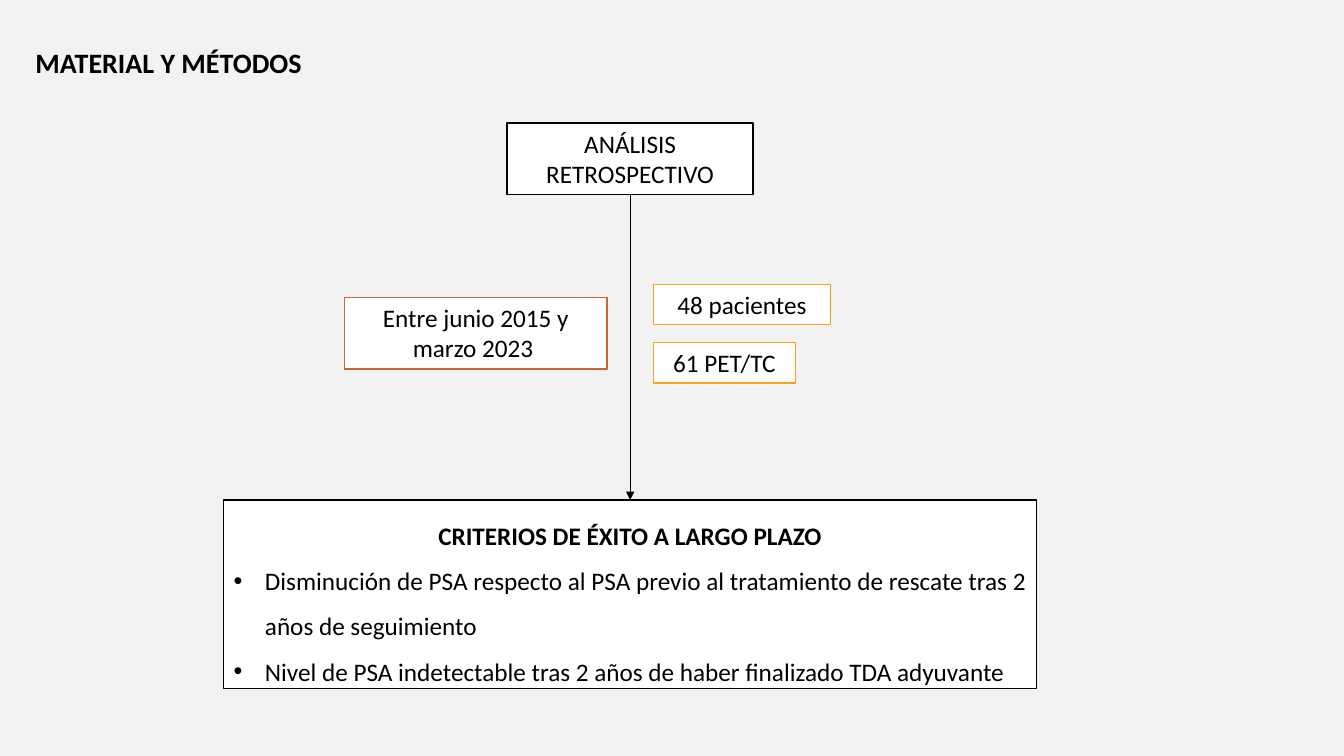
from pptx import Presentation
from pptx.dml.color import RGBColor
from pptx.enum.shapes import MSO_CONNECTOR, MSO_SHAPE
from pptx.enum.text import MSO_ANCHOR, MSO_AUTO_SIZE, PP_ALIGN as AL
from pptx.oxml.ns import qn
from pptx.util import Inches, Pt
from lxml.etree import SubElement


def rgb(value):
    return RGBColor.from_string(value)


class Deck:
    FONT, INK, PAPER, GROUND = "Calibri", "000000", "FFFFFF", "F2F2F2"
    BODY, HEADING = 18, 20

    def __init__(self):
        self.prs = Presentation()
        self.prs.slide_width, self.prs.slide_height = Inches(13.33), Inches(7.5)
        self.s = self.prs.slides.add_slide(self.prs.slide_layouts[5])
        self.s.background.fill.solid()
        self.s.background.fill.fore_color.rgb = rgb(self.GROUND)

    def style(self, p, size, align, bold=False, spacing=None):
        p.alignment = align
        p.line_spacing = spacing
        p.font.name, p.font.size, p.font.bold = self.FONT, Pt(size), bold
        p.font.color.rgb = rgb(self.INK)

    def frame(self, tf):
        tf.word_wrap = True
        tf.auto_size = MSO_AUTO_SIZE.SHAPE_TO_FIT_TEXT
        tf.vertical_anchor = MSO_ANCHOR.TOP

    def title(self, text, x, y, w, h):
        sp = self.s.shapes.title
        sp.left, sp.top, sp.width, sp.height = map(Inches, (x, y, w, h))
        sp.text_frame.text = text
        self.frame(sp.text_frame)
        self.style(sp.text_frame.paragraphs[0], self.HEADING, AL.LEFT, True, 1.5)

    def box(self, text, x, y, w, h, line=INK, bold=False, spacing=None):
        sp = self.s.shapes.add_shape(MSO_SHAPE.RECTANGLE, *map(Inches, (x, y, w, h)))
        sp.shadow.inherit = False
        sp.fill.solid()
        sp.fill.fore_color.rgb = rgb(self.PAPER)
        sp.line.color.rgb, sp.line.width = rgb(line), Pt(1)
        sp.text_frame.text = text
        self.frame(sp.text_frame)
        self.style(sp.text_frame.paragraphs[0], self.BODY, AL.CENTER, bold, spacing)
        return sp

    def bullet(self, sp, text):
        p = sp.text_frame.add_paragraph()
        p.text = text
        self.style(p, self.BODY, AL.JUSTIFY, spacing=1.5)
        pPr = p._p.get_or_add_pPr()
        indent = Inches(0.31)
        pPr.set("marL", str(indent))
        pPr.set("indent", str(-indent))
        # Bullet elements go before the default run properties
        font = pPr.makeelement(qn("a:buFont"), {"typeface": "Arial"})
        char = pPr.makeelement(qn("a:buChar"), {"char": "•"})
        run_style = pPr.find(qn("a:defRPr"))
        run_style.addprevious(font)
        run_style.addprevious(char)

    def arrow(self, upper, lower):
        c = self.s.shapes.add_connector(MSO_CONNECTOR.STRAIGHT, 0, 0, 0, 0)
        c.begin_connect(upper, 2)
        c.end_connect(lower, 0)
        c.line.color.rgb, c.line.width = rgb(self.INK), Pt(0.5)
        SubElement(c.line._get_or_add_ln(), qn("a:tailEnd"), type="triangle")
        SubElement(c._element.spPr, qn("a:effectLst"))


def main():
    deck = Deck()
    deck.title("MATERIAL Y MÉTODOS", 0.25, 0.23, 13.08, 0.55)

    # Study design leading to the success criteria
    design = deck.box("ANÁLISIS RETROSPECTIVO", 5.03, 1.22, 2.44, 0.71)
    criteria = deck.box("CRITERIOS DE ÉXITO A LARGO PLAZO", 2.22, 4.96, 8.06, 1.87,
                        bold=True, spacing=1.5)
    for text in (
        "Disminución de PSA respecto al PSA previo al tratamiento de rescate "
        "tras 2 años de seguimiento",
        "Nivel de PSA indetectable tras 2 años de haber finalizado TDA adyuvante",
    ):
        deck.bullet(criteria, text)
    deck.arrow(design, criteria)

    # Sample and period beside the arrow
    for text, y, w in (("48 pacientes", 2.82, 1.76), ("61 PET/TC", 3.4, 1.41)):
        deck.box(text, 6.48, y, w, 0.4, line="F6A21D")
    deck.box("Entre junio 2015 y marzo 2023 ", 3.42, 2.95, 2.6, 0.71, line="C96731")

    deck.prs.save("out.pptx")


if __name__ == "__main__":
    main()
